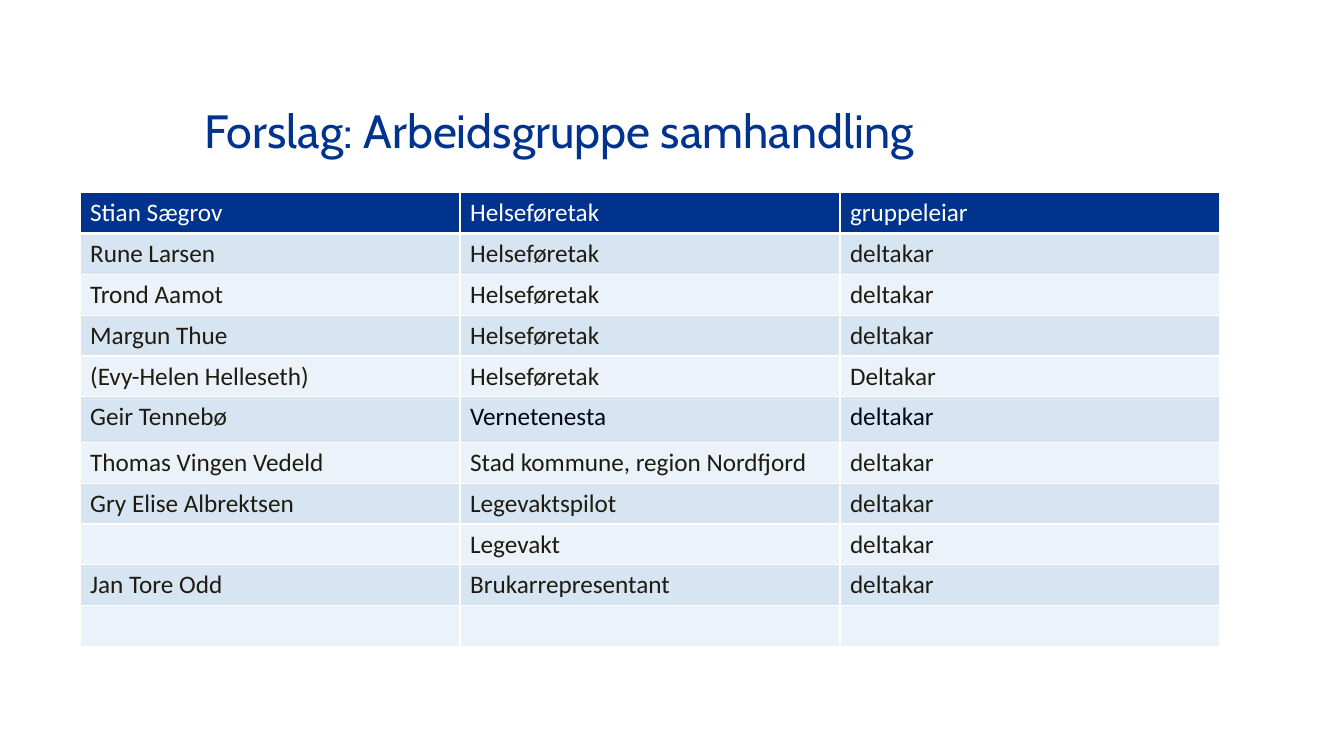
from typing import NamedTuple

from lxml import etree
from pptx import Presentation
from pptx import util as u
from pptx.dml.color import RGBColor
from pptx.enum import text
from pptx.oxml import ns

NAVY = RGBColor(0x00, 0x33, 0x8D)
WHITE = RGBColor(0xFF, 0xFF, 0xFF)
BAND_DARK = RGBColor(0xD7, 0xE4, 0xF2)
BAND_LIGHT = RGBColor(0xEC, 0xF2, 0xF9)
BODY_INK = RGBColor(0x1E, 0x1C, 0x11)
BLACK_INK = RGBColor(0x00, 0x07, 0x14)

COLUMN_WIDTH = u.Pt(271.4)
ROW_HEIGHT = u.Pt(29.2)
TALL_ROW_HEIGHT = u.Pt(32.4)
THIN, THICK = u.Pt(1), u.Pt(3)


class Member(NamedTuple):
    name: str
    unit: str
    role: str = "deltakar"
    ink: RGBColor = BODY_INK  # colour of unit and role
    height: int = ROW_HEIGHT


MEMBERS = [
    Member("Stian Sægrov", "Helseføretak", "gruppeleiar", WHITE),
    Member("Rune Larsen", "Helseføretak"),
    Member("Trond Aamot", "Helseføretak"),
    Member("Margun Thue", "Helseføretak"),
    Member("(Evy-Helen Helleseth)", "Helseføretak", "Deltakar"),
    Member("Geir Tennebø", "Vernetenesta", ink=BLACK_INK, height=TALL_ROW_HEIGHT),
    Member("Thomas Vingen Vedeld", "Stad kommune, region Nordfjord"),
    Member("Gry Elise Albrektsen", "Legevaktspilot"),
    Member("", "Legevakt"),
    Member("Jan Tore Odd", "Brukarrepresentant"),
    Member("", "", ""),
]


def set_borders(cell, top: int, bottom: int) -> None:
    """Draw white borders; call before the fill, which must follow them."""
    properties = cell._tc.get_or_add_tcPr()
    for side, width in (("L", THIN), ("R", THIN), ("T", top), ("B", bottom)):
        line = etree.SubElement(properties, ns.qn(f"a:ln{side}"), w=str(int(width)))
        fill = etree.SubElement(line, ns.qn("a:solidFill"))
        etree.SubElement(fill, ns.qn("a:srgbClr"), val=str(WHITE))


def fill_cell(cell, words: str, ink: RGBColor, fill: RGBColor) -> None:
    cell.fill.solid()
    cell.fill.fore_color.rgb = fill
    para = cell.text_frame.paragraphs[0]
    para.text = words
    para.font.name = "Calibri"
    para.font.size = u.Pt(18)
    para.font.bold = False
    para.font.color.rgb = ink


def add_title(page) -> None:
    title = page.shapes.title
    title.left, title.top = u.Pt(57), u.Pt(64)
    title.width, title.height = u.Pt(685.4), u.Pt(57)
    frame = title.text_frame
    frame.text = "Forslag: Arbeidsgruppe samhandling"
    frame.auto_size = text.MSO_AUTO_SIZE.NONE
    frame.vertical_anchor = text.MSO_ANCHOR.MIDDLE
    para = frame.paragraphs[0]
    para.alignment = text.PP_ALIGN.CENTER
    para.font.name = "Cabin"
    para.font.size = u.Pt(33.3)
    para.font.color.rgb = NAVY


def add_member_table(page) -> None:
    height = sum(member.height for member in MEMBERS)
    table = page.shapes.add_table(
        len(MEMBERS), 3, u.Pt(57.2), u.Pt(137.5), 3 * COLUMN_WIDTH, height
    ).table
    for column in table.columns:
        column.width = COLUMN_WIDTH
    for index, member in enumerate(MEMBERS):
        table.rows[index].height = member.height
        if index == 0:
            fill, name_ink = NAVY, WHITE
        else:
            fill, name_ink = (BAND_DARK if index % 2 else BAND_LIGHT), BODY_INK
        entries = (
            (member.name, name_ink),
            (member.unit, member.ink),
            (member.role, member.ink),
        )
        for position, (words, ink) in enumerate(entries):
            cell = table.cell(index, position)
            set_borders(
                cell,
                top=THICK if index == 1 else THIN,
                bottom=THICK if index == 0 else THIN,
            )
            fill_cell(cell, words, ink, fill)


def main() -> None:
    deck = Presentation()
    deck.slide_width, deck.slide_height = u.Pt(960), u.Pt(540)
    page = deck.slides.add_slide(deck.slide_layouts[5])  # title only
    add_title(page)
    add_member_table(page)
    deck.save("out.pptx")


if __name__ == "__main__":
    main()
